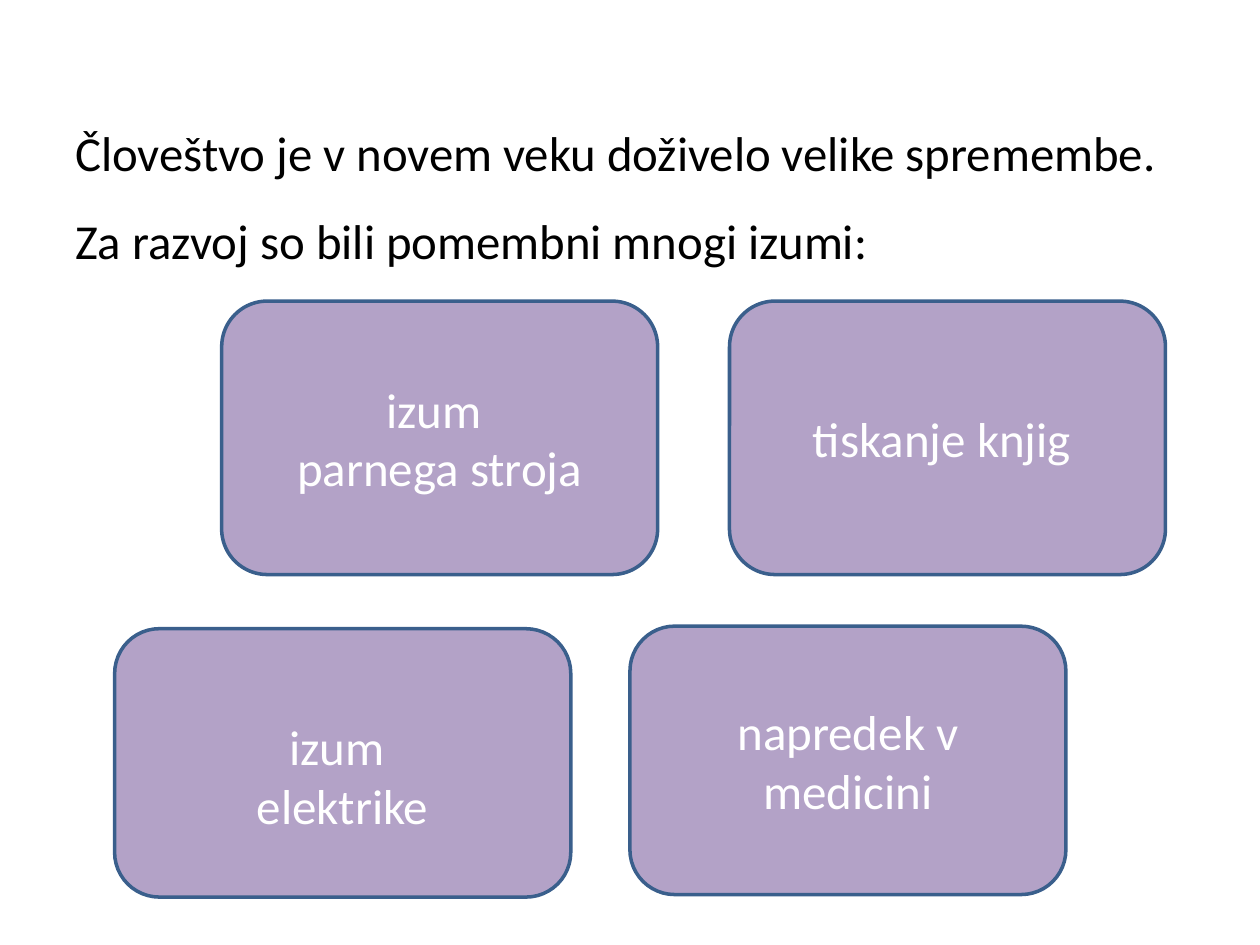
"""Build a slide on the inventions that shaped the modern age."""
import pptx
import pptx.dml.color
import pptx.enum.shapes
import pptx.enum.text
import pptx.util
from pptx.util import Inches

BLACK = pptx.dml.color.RGBColor(0x00, 0x00, 0x00)
WHITE = pptx.dml.color.RGBColor(0xFF, 0xFF, 0xFF)
LILAC = pptx.dml.color.RGBColor(0xB3, 0xA2, 0xC7)
BLUE = pptx.dml.color.RGBColor(0x3A, 0x5F, 0x8C)
ALIGN = pptx.enum.text.PP_ALIGN
ANCHOR = pptx.enum.text.MSO_ANCHOR

CARDS = [
    (("izum ", "parnega stroja"), (1.76, 2.39, 3.46, 2.17), 0.05),
    (("tiskanje knjig ",), (5.79, 2.39, 3.46, 2.17), 0.05),
    (("izum ", "elektrike"), (0.91, 4.99, 3.62, 2.13), 0.25),
    (("napredek v medicini",), (5, 4.97, 3.46, 2.13), 0.05),
]
INTRO = (
    "Človeštvo je v novem veku doživelo velike spremembe.",
    "Za razvoj so bili pomembni mnogi izumi:",
)


def write(frame, lines, size=28, color=WHITE, align=ALIGN.CENTER,
          anchor=ANCHOR.MIDDLE, space=1.0, top=0.05, bottom=0.05):
    frame.word_wrap = True
    frame.vertical_anchor = anchor
    frame.margin_top = Inches(top)
    frame.margin_bottom = Inches(bottom)
    for index, line in enumerate(lines):
        para = frame.paragraphs[0] if index == 0 else frame.add_paragraph()
        para.alignment = align
        para.line_spacing = space
        run = para.add_run()
        run.text = line
        run.font.name = "Calibri"
        run.font.size = pptx.util.Pt(size)
        run.font.color.rgb = color


def add_intro(slide):
    box = slide.shapes.add_textbox(Inches(0.5), Inches(0.3), Inches(9), Inches(1.84))
    write(box.text_frame, INTRO, size=27.9, color=BLACK, align=ALIGN.LEFT,
          anchor=ANCHOR.BOTTOM, space=1.5, bottom=0)


def add_card(slide, lines, place, top):
    kind = pptx.enum.shapes.MSO_SHAPE.ROUNDED_RECTANGLE
    card = slide.shapes.add_shape(kind, *map(Inches, place))
    card.shadow.inherit = False
    card.fill.solid()
    card.fill.fore_color.rgb = LILAC
    card.line.color.rgb = BLUE
    card.line.width = pptx.util.Pt(2)
    write(card.text_frame, lines, top=top)


def main():
    deck = pptx.Presentation()
    deck.slide_width = Inches(10)
    deck.slide_height = Inches(7.5)
    slide = deck.slides.add_slide(deck.slide_layouts[6])
    add_intro(slide)
    for lines, place, top in CARDS:
        add_card(slide, lines, place, top)
    deck.save("out.pptx")


if __name__ == "__main__":
    main()
